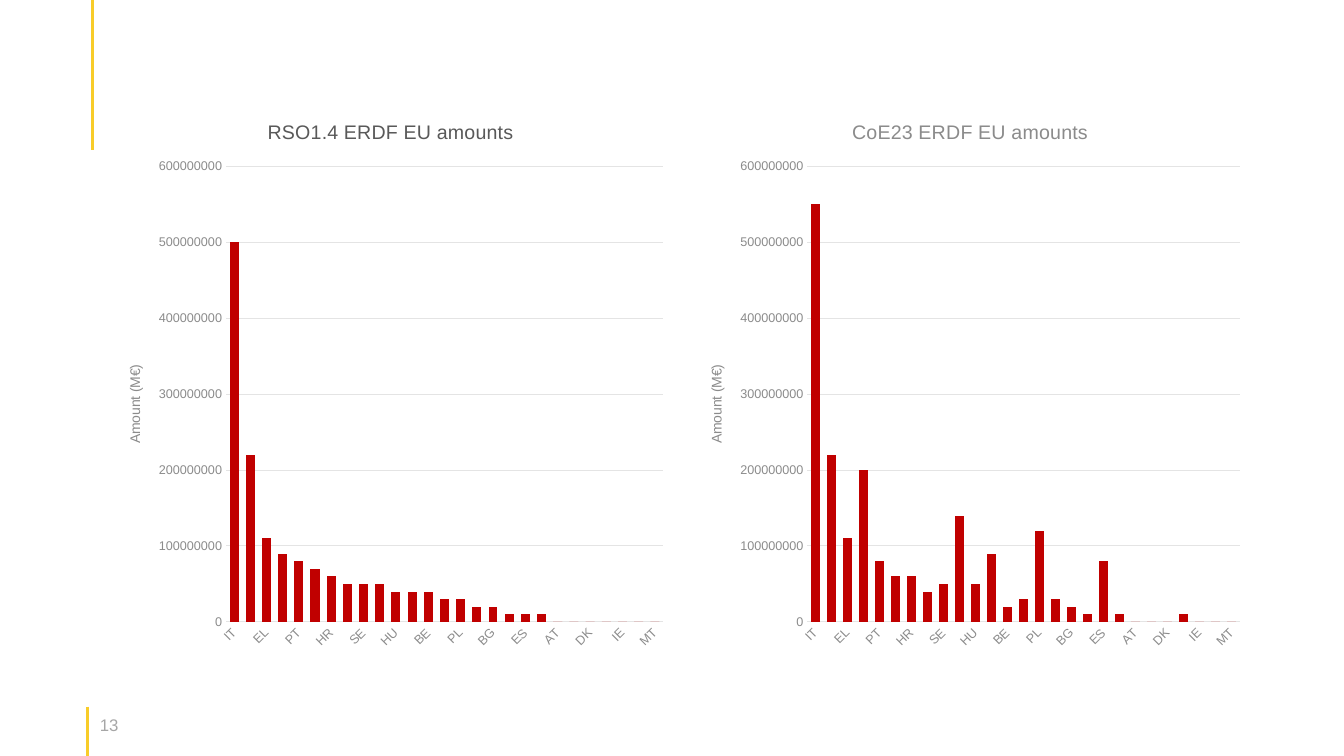
"""Build a slide with two column charts of ERDF EU amounts by country."""
import pptx
import pptx.chart.data
import pptx.dml.color
import pptx.enum.chart
import pptx.enum.shapes
import pptx.enum.text
import pptx.oxml
import pptx.oxml.ns
import pptx.util

Pt = pptx.util.Pt
RGB = pptx.dml.color.RGBColor
YELLOW = RGB(0xF8, 0xCC, 0x29)
RED = RGB(0xC0, 0x00, 0x00)
GRID = RGB(0xE4, 0xE4, 0xE4)
NUMBER = RGB(0xA6, 0xA6, 0xA6)
LABEL = RGB(0x8B, 0x8B, 0x8B)
DARK = RGB(0x59, 0x59, 0x59)
BODY = RGB(0x4D, 0x4D, 0x4D)
C_NS = pptx.oxml.ns.nsdecls("c")
A_NS = pptx.oxml.ns.nsdecls("a")
UNIT = 10_000_000

countries = ("IT SK EL CZ PT RO HR LT SE FR HU DE BE LV "
             "PL SI BG EE ES NL AT CY DK FI IE LU MT").split()
charts = [
    ("RSO1.4 ERDF EU amounts", DARK, 76.3, 405.4,
     [50, 22, 11, 9, 8, 7, 6, 5, 5, 5, 4, 4, 4, 3,
      3, 2, 2, 1, 1, 1, 0, 0, 0, 0, 0, 0, 0]),
    ("CoE23 ERDF EU amounts", LABEL, 492.5, 401,
     [55, 22, 11, 20, 8, 6, 6, 4, 5, 14, 5, 9, 2, 3,
      12, 3, 2, 1, 8, 1, 0, 0, 0, 1, 0, 0, 0]),
]
plot_area = {"x": 0.21, "y": 0.12, "w": 0.77, "h": 0.81}


def style_font(font, size, color):
    values = {"name": "Arial", "size": Pt(size), "bold": False}
    for name, value in values.items():
        setattr(font, name, value)
    font.color.rgb = color


def add_title(target, text, size, color):
    tf = target.text_frame
    tf.text = text
    style_font(tf.paragraphs[0].runs[0].font, size, color)


prs = pptx.Presentation()
prs.slide_width, prs.slide_height = Pt(960), Pt(540)
s = prs.slides.add_slide(prs.slide_layouts[6])

tb = s.shapes.add_textbox(Pt(71.3), Pt(506.9), Pt(35.3), Pt(21.6))
tf = tb.text_frame
frame = {"margin_left": 0, "margin_right": 0, "margin_top": Pt(3.6),
         "margin_bottom": Pt(3.6), "word_wrap": True,
         "auto_size": pptx.enum.text.MSO_AUTO_SIZE.SHAPE_TO_FIT_TEXT}
for name, value in frame.items():
    setattr(tf, name, value)
r = tf.paragraphs[0].add_run()
r.text = "13"
style_font(r.font, 12, NUMBER)

for x, top, bottom in [(62.6, 504.7, 540), (66.2, 0, 107.3)]:
    line = s.shapes.add_connector(pptx.enum.shapes.MSO_CONNECTOR.STRAIGHT,
                                  Pt(x), Pt(top), Pt(x), Pt(bottom))
    line.line.color.rgb = YELLOW
    line.line.width = Pt(2.25)
    line._element.spPr.append(pptx.oxml.parse_xml(f"<a:effectLst {A_NS}/>"))

for title, title_color, left, width, amounts in charts:
    data = pptx.chart.data.CategoryChartData(number_format="General")
    data.categories = countries
    data.add_series("Series 1", [amount * UNIT for amount in amounts])
    chart = s.shapes.add_chart(
        pptx.enum.chart.XL_CHART_TYPE.COLUMN_CLUSTERED,
        Pt(left), Pt(70.6), Pt(width), Pt(401.8), data).chart
    style_font(chart.font, 10, BODY)
    chart.has_legend = False
    chart.has_title = True
    add_title(chart.chart_title, title, 14, title_color)
    chart.chart_title.include_in_layout = False

    plot = chart.plots[0]
    for name, value in {"gap_width": 80, "overlap": -27,
                        "vary_by_categories": False}.items():
        setattr(plot, name, value)
    fill = plot.series[0].format.fill
    fill.solid()
    fill.fore_color.rgb = RED

    cat, val = chart.category_axis, chart.value_axis
    for axis in (cat, val):
        axis.major_tick_mark = pptx.enum.chart.XL_TICK_MARK.NONE
        axis.minor_tick_mark = pptx.enum.chart.XL_TICK_MARK.NONE
        style_font(axis.tick_labels.font, 9, LABEL)
    cat._element.txPr.bodyPr.set("rot", "-2700000")
    val.minimum_scale, val.maximum_scale = 0, 60 * UNIT
    val.major_unit = 10 * UNIT
    val.tick_labels.number_format = "General"
    val.tick_labels.number_format_is_linked = False
    val.has_major_gridlines = True
    for fmt in (cat.format, val.major_gridlines.format):
        fmt.line.color.rgb = GRID
        fmt.line.width = Pt(0.75)
    val.format.line.fill.background()
    add_title(val.axis_title, "Amount (M€)", 10, LABEL)
    val.axis_title.text_frame._txBody.bodyPr.set("rot", "-5400000")

    area = chart._chartSpace.chart.plotArea
    for old in area.findall(pptx.oxml.ns.qn("c:layout")):
        area.remove(old)
    modes = "".join(f'<c:{k}Mode val="edge"/>' for k in "xy")
    sizes = "".join(f'<c:{k} val="{v}"/>' for k, v in plot_area.items())
    area.insert(0, pptx.oxml.parse_xml(
        f'<c:layout {C_NS}><c:manualLayout><c:layoutTarget val="inner"/>'
        f"{modes}{sizes}</c:manualLayout></c:layout>"))

prs.save("out.pptx")
